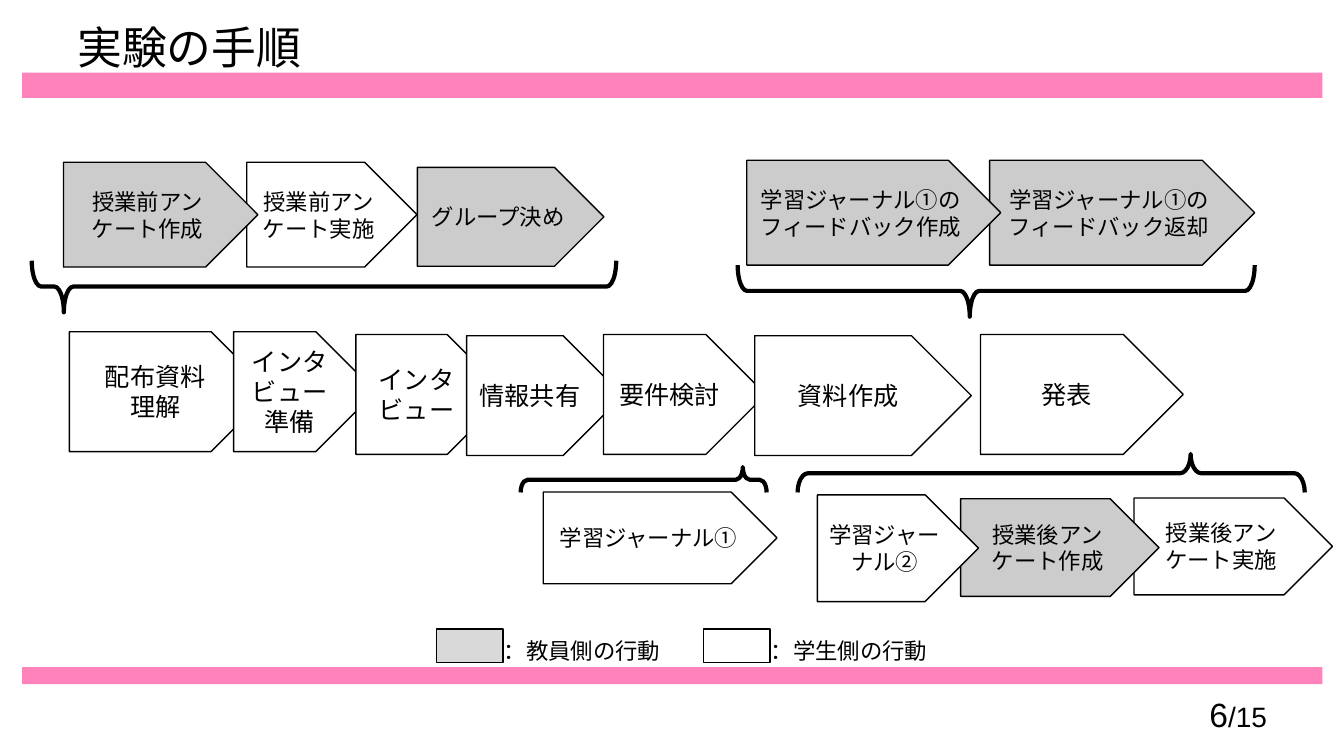
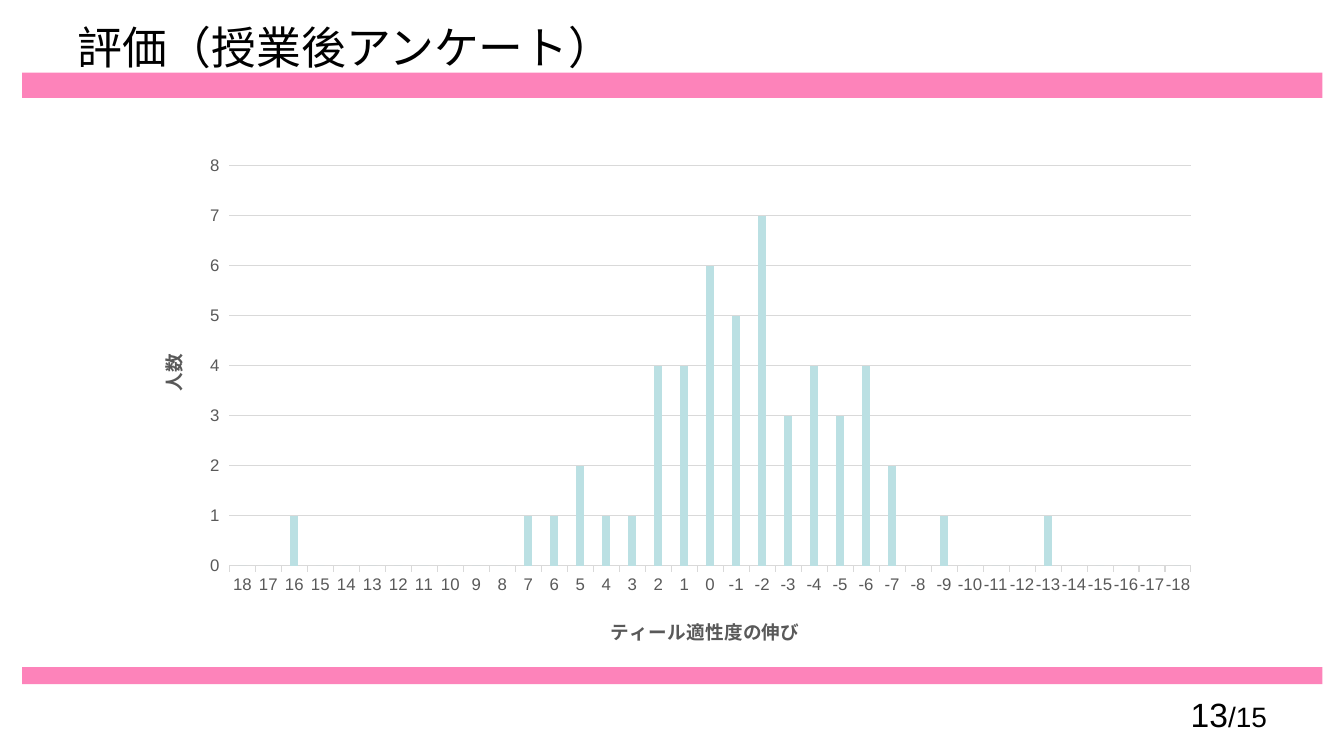
"""Build two slides on an experiment: its procedure and its survey result."""
from dataclasses import dataclass

from pptx import Presentation
from pptx import util as u
from pptx.chart import data as chart_data
from pptx.dml.color import RGBColor
from pptx.enum import chart as charts, shapes, text
from pptx.oxml import ns, xmlchemy


@dataclass(frozen=True)
class Theme:
    """Colours, fonts and type sizes shared by the slides."""
    band: str = "FD83BA"
    ink: str = "000000"
    teacher: str = "CCCCCC"
    teacher_key: str = "D9D9D9"
    student: str = "FFFFFF"
    bars: str = "BBE0E3"
    grid: str = "D9D9D9"
    axis: str = "595959"
    latin: str = "Arial"
    japanese: str = "Noto Sans CJK JP"
    title: float = 32
    number: float = 24
    total: float = 20
    main_step: float = 18
    side_step: float = 16
    axis_title: float = 13.3
    tick: float = 12


THEME = Theme()
PAGES = 15
MIDDLE = text.MSO_ANCHOR.MIDDLE
CENTER = text.PP_ALIGN.CENTER

# Each step: label, role, left, top, width, height
SIDE_STEPS = [
    ("授業後アンケート実施", "student", 28.58, 12.55, 5, 2.44),
    ("学習ジャーナル①のフィードバック返却", "teacher", 24.94, 4.04, 6.68, 2.64),
    ("学習ジャーナル①のフィードバック作成", "teacher", 18.82, 4.04, 6.4, 2.64),
    ("学習ジャーナル①", "student", 13.69, 12.4, 5.89, 2.31),
    ("グループ決め", "teacher", 10.52, 4.22, 4.7, 2.49),
    ("授業前アンケート実施", "student", 6.22, 4.09, 4.29, 2.64),
    ("授業前アンケート作成", "teacher", 1.6, 4.09, 4.9, 2.64),
    ("授業後アンケート作成", "teacher", 24.21, 12.57, 5, 2.46),
    ("学習ジャーナル②", "student", 20.6, 12.47, 4.06, 2.69),
]
MAIN_STEPS = [
    ("配布資料\n理解", 1.75, 8.36, 5.08),
    ("インタビュー\n準備", 5.89, 8.36, 3.58),
    ("インタビュー", 8.97, 8.43, 3.81),
    ("情報共有", 11.76, 8.46, 3.94),
    ("要件検討", 15.21, 8.43, 4.09),
    ("資料作成", 19.02, 8.46, 5.46),
    ("発表", 24.71, 8.43, 5.11),
]
MAIN_HEIGHT = 3.02
# Each brace: left, top, width, height, rotation, curl, tip position
BRACES = [
    (0.8, 6.57, 14.73, 1.3, 270, 0.184, 0.055),
    (18.59, 6.68, 13.03, 1.3, 270, 0.184, 0.449),
    (20.1, 11.44, 12.78, 0.97, 90, 0.275, 0.225),
    (13.12, 11.77, 6.2, 0.64, 90, 0.275, 0.097),
]
KEYS = [("：教員側の行動", THEME.teacher_key), ("：学生側の行動", THEME.student)]
GROWTH = range(18, -19, -1)
PEOPLE = {16: 1, 7: 1, 6: 1, 5: 2, 4: 1, 3: 1, 2: 4, 1: 4, 0: 6, -1: 5, -2: 7,
          -3: 3, -4: 4, -5: 3, -6: 4, -7: 2, -9: 1, -13: 1}


def box(*lengths):
    """Turn centimetres into slide lengths."""
    return [u.Cm(length) for length in lengths]


def format_run(run, size, colour=THEME.ink, latin=THEME.latin):
    """Set size, colour and both typefaces of a run."""
    run.font.size = u.Pt(size)
    run.font.color.rgb = RGBColor.from_string(colour)
    run.font.name = latin
    east_asian = xmlchemy.OxmlElement("a:ea")
    east_asian.set("typeface", THEME.japanese)
    run.font.latin_element = None
    run.font.name = latin
    run._r.get_or_add_rPr().append(east_asian)


def write(frame, words, size, align=None, **look):
    """Fill a text frame and format all of its runs."""
    frame.text = words
    for paragraph in frame.paragraphs:
        paragraph.alignment = align
        for run in paragraph.runs:
            format_run(run, size, **look)


def add_label(slide, words, size, place, align=None, wrap=True):
    """Add a text box and return its frame."""
    frame = slide.shapes.add_textbox(*box(*place)).text_frame
    frame.word_wrap = wrap
    write(frame, words, size, align)
    return frame


def add_figure(slide, kind, place, fill=None, line=0):
    """Add a flat preset shape with an optional fill and outline."""
    figure = slide.shapes.add_shape(kind, *box(*place))
    figure.shadow.inherit = False
    if fill:
        figure.fill.solid()
        figure.fill.fore_color.rgb = RGBColor.from_string(fill)
    else:
        figure.fill.background()
    if line:
        figure.line.color.rgb = RGBColor.from_string(THEME.ink)
        figure.line.width = u.Pt(line)
    else:
        figure.line.fill.background()
    return figure


def add_step(slide, words, size, place, fill):
    """Add one arrow-shaped step of the procedure."""
    step = add_figure(slide, shapes.MSO_SHAPE.PENTAGON, place, fill, 1)
    step.text_frame.vertical_anchor = MIDDLE
    write(step.text_frame, words, size, CENTER, latin=THEME.japanese)


def add_brace(slide, left, top, width, height, rotation, curl, tip):
    """Add a lying brace that covers the given area."""
    shift = (width - height) / 2
    brace = add_figure(slide, shapes.MSO_SHAPE.LEFT_BRACE,
                       (left + shift, top - shift, height, width), line=3)
    brace.rotation = rotation
    brace.adjustments[0] = curl
    brace.adjustments[1] = tip


def add_bands(slide):
    """Put the two bands on the layout so that every slide shows them."""
    for top, height in ((1.83, 0.64), (16.81, 0.43)):
        band = add_figure(slide, shapes.MSO_SHAPE.RECTANGLE,
                          (0.56, top, 32.77, height), THEME.band)
        slide.slide_layout.shapes.element.append(band.element)


def add_page(deck, title, number):
    """Add a slide with its title and page number."""
    slide = deck.slides.add_slide(deck.slide_layouts[6])
    heading = add_label(slide, title, THEME.title, (1.7, 0.53, 30.48, 1.3))
    heading.vertical_anchor = MIDDLE
    counter = add_label(slide, str(number), THEME.number,
                        (24.28, 17.35, 7.9, 1.32), text.PP_ALIGN.RIGHT)
    total = counter.paragraphs[0].add_run()
    total.text = f"/{PAGES}"
    format_run(total, THEME.total)
    return slide


def add_procedure(slide):
    """Draw the steps, braces and key of the procedure."""
    fills = {"teacher": THEME.teacher, "student": THEME.student}
    for words, role, *place in SIDE_STEPS:
        add_step(slide, words, THEME.side_step, place, fills[role])
    for words, left, top, width in MAIN_STEPS:
        add_step(slide, words, THEME.main_step,
                 (left, top, width, MAIN_HEIGHT), THEME.student)
    for brace in BRACES:
        add_brace(slide, *brace)
    for index, (words, fill) in enumerate(KEYS):
        left = 11 + index * 6.73
        add_figure(slide, shapes.MSO_SHAPE.RECTANGLE,
                   (left, 15.85, 1.68, 0.84), fill, 1)
        add_label(slide, words, THEME.side_step,
                  (left + 1.42, 15.93, 4.5, 0.94), CENTER, wrap=False)


def set_layout(parent, **settings):
    """Fix the place of a chart part as fractions of the chart."""
    layout = parent.find(ns.qn("c:layout"))
    if layout is None:
        layout = xmlchemy.OxmlElement("c:layout")
        parent.insert(len(parent.findall(ns.qn("c:tx"))), layout)
    manual = xmlchemy.OxmlElement("c:manualLayout")
    layout.append(manual)
    for name, value in settings.items():
        setting = xmlchemy.OxmlElement(f"c:{name}")
        setting.set("val", str(value))
        manual.append(setting)


def format_axis(axis, title, rotation, x, y):
    """Give an axis its title, labels and place."""
    write(axis.axis_title.text_frame, title, THEME.axis_title, colour=THEME.axis)
    heading = axis.axis_title.element
    for body in heading.iter(ns.qn("a:bodyPr")):
        body.set("rot", str(rotation))
        body.set("vert", "horz")
    set_layout(heading, xMode="edge", yMode="edge", x=x, y=y)
    font = axis.tick_labels.font
    font.size = u.Pt(THEME.tick)
    font.name = THEME.latin
    font.color.rgb = RGBColor.from_string(THEME.axis)
    axis.element_labels = None
    axis.major_tick_mark = charts.XL_TICK_MARK.OUTSIDE


def set_line(line):
    """Apply the thin grid line."""
    line.color.rgb = RGBColor.from_string(THEME.grid)
    line.width = u.Pt(0.75)


def add_histogram(slide):
    """Chart how many people had each growth."""
    table = chart_data.CategoryChartData()
    table.categories = [str(growth) for growth in GROWTH]
    table.add_series("人数", [PEOPLE.get(growth, 0) for growth in GROWTH])
    chart = slide.shapes.add_chart(charts.XL_CHART_TYPE.COLUMN_CLUSTERED,
                                   *box(3.33, 3.66, 27.23, 12.93), table).chart
    chart.has_title = False
    chart.has_legend = False
    chart.font.name = THEME.latin
    chart.font.size = u.Pt(10)
    plot = chart.plots[0]
    plot.gap_width = 219
    plot.overlap = -27
    plot.vary_by_categories = False
    bars = plot.series[0].format.fill
    bars.solid()
    bars.fore_color.rgb = RGBColor.from_string(THEME.bars)

    growth, people = chart.category_axis, chart.value_axis
    format_axis(growth, "ティール適性度の伸び", 0, 0.44, 0.91)
    format_axis(people, "人数", -5400000, 0.02, 0.4)
    for body in growth._element.txPr.iter(ns.qn("a:bodyPr")):
        body.set("rot", "0")
    set_line(growth.format.line)
    people.format.line.fill.background()
    people.minimum_scale, people.maximum_scale, people.major_unit = 0, 8, 1
    set_line(people.major_gridlines.format.line)
    set_layout(next(chart.element.iter(ns.qn("c:plotArea"))),
               layoutTarget="inner", xMode="edge", yMode="edge",
               x=0.09, y=0.04, w=0.89, h=0.78)


def main():
    """Build and save the deck."""
    deck = Presentation()
    deck.slide_width, deck.slide_height = box(33.87, 19.05)
    procedure = add_page(deck, "実験の手順", 6)
    add_bands(procedure)
    add_procedure(procedure)
    add_histogram(add_page(deck, "評価（授業後アンケート）", 13))
    deck.save("out.pptx")


if __name__ == "__main__":
    main()
